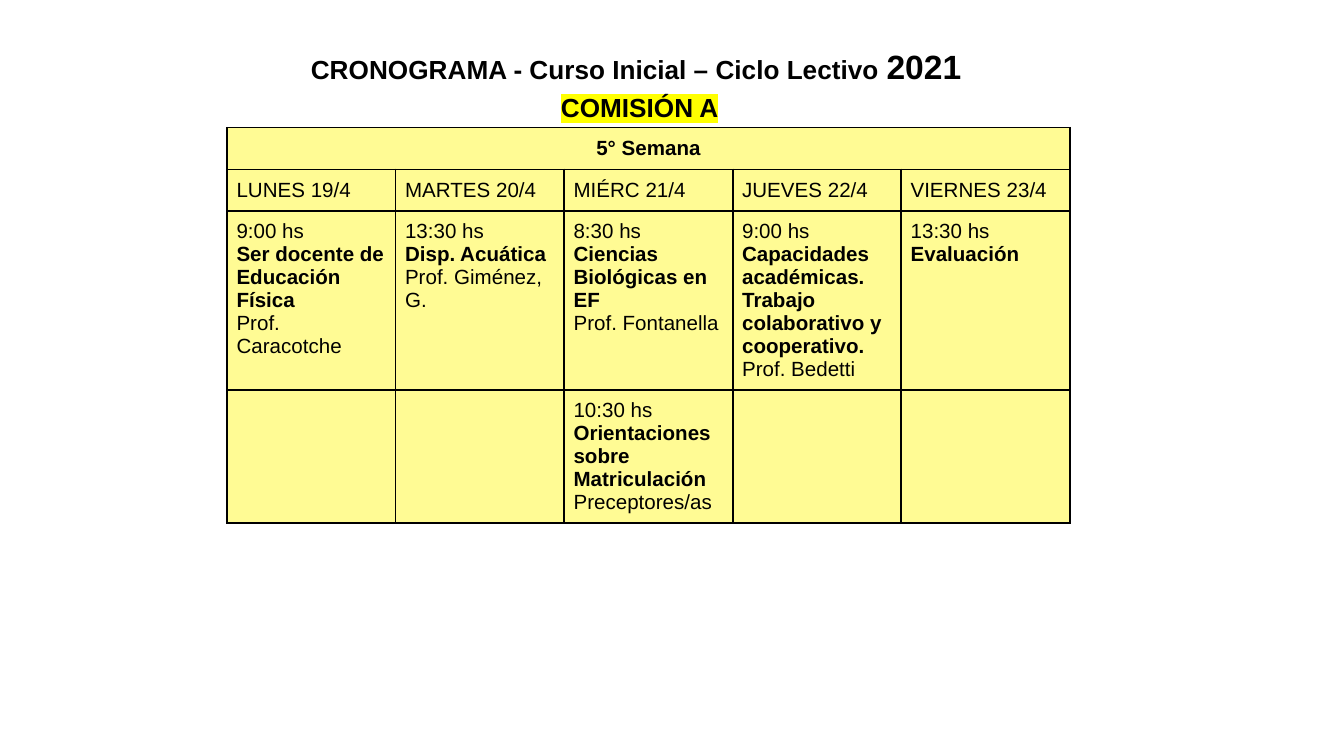
from dataclasses import dataclass

from lxml import etree
from pptx import Presentation
from pptx.dml.color import RGBColor
from pptx.enum import text as t
from pptx.oxml import ns
from pptx.table import _Cell as Cell
from pptx.util import Inches, Pt

COLORS = {"ink": "000000", "cell": "FFFB94", "mark": "FFFF00"}
FONT = "Arial"
PAD = Inches(0.07)
WIDE = Inches(10)
LEFT, TOP, WIDTH = Inches(1.69), Inches(0.95), Inches(6.27)
ROWS = [0.31, 0.31, 1.33, 0.99]


@dataclass
class Class:
    hour: str
    topic: str
    staff: str = ""


@dataclass
class Day:
    name: str
    first: Class
    second: Class | None = None


DAYS = [
    Day("LUNES 19/4",
        Class("9:00 hs", "Ser docente de Educación Física", "Prof. Caracotche")),
    Day("MARTES 20/4",
        Class("13:30 hs", "Disp. Acuática", "Prof. Giménez, G.")),
    Day("MIÉRC 21/4",
        Class("8:30 hs", "Ciencias Biológicas en EF", "Prof. Fontanella"),
        Class("10:30 hs", "Orientaciones sobre Matriculación", "Preceptores/as")),
    Day("JUEVES 22/4",
        Class("9:00 hs",
              "Capacidades académicas. Trabajo colaborativo y cooperativo.",
              "Prof. Bedetti")),
    Day("VIERNES 23/4", Class("13:30 hs", "Evaluación")),
]


def write(para, words: str, *, size: float = 11, bold: bool = False,
          mark: str | None = None) -> None:
    """Add a run to a paragraph; mark names its highlight colour."""
    run = para.add_run()
    run.text = words
    font = run.font
    font.size, font.bold, font.name = Pt(size), bold, FONT
    font.color.rgb = RGBColor.from_string(COLORS["ink"])
    if mark:
        light = etree.Element(ns.qn("a:highlight"))
        etree.SubElement(light, ns.qn("a:srgbClr"), val=COLORS[mark])
        run._r.rPr.find(ns.qn("a:solidFill")).addnext(light)


def style(cell: Cell) -> None:
    """Set margins, fill and a thin border on all four sides."""
    cell.margin_left = cell.margin_right = PAD
    cell.margin_top = cell.margin_bottom = PAD
    cell.fill.solid()
    cell.fill.fore_color.rgb = RGBColor.from_string(COLORS["cell"])
    props = cell._tc.get_or_add_tcPr()
    for spot, side in enumerate("LRTB"):
        line = etree.Element(ns.qn(f"a:ln{side}"), w=str(Pt(1)))
        fill = etree.SubElement(line, ns.qn("a:solidFill"))
        etree.SubElement(fill, ns.qn("a:srgbClr"), val=COLORS["ink"])
        props.insert(spot, line)


def fill_class(cell: Cell, item: Class) -> None:
    frame = cell.text_frame
    lines = [(item.hour, False), (item.topic, True), (item.staff, False)]
    for spot, (words, bold) in enumerate(lines):
        if words:
            para = frame.add_paragraph() if spot else frame.paragraphs[0]
            write(para, words, bold=bold)


def add_week(slide) -> None:
    frame = slide.shapes.add_table(len(ROWS), len(DAYS), LEFT, TOP, WIDTH,
                                   Inches(sum(ROWS)))
    table = frame.table
    table.first_row = table.horz_banding = False
    for row, high in zip(table.rows, ROWS):
        row.height = Inches(high)
    for cell in table.iter_cells():
        style(cell)

    head = table.cell(0, 0)
    head.merge(table.cell(0, len(DAYS) - 1))
    para = head.text_frame.paragraphs[0]
    para.alignment = t.PP_ALIGN.CENTER
    write(para, "5° Semana", bold=True)

    for col, day in enumerate(DAYS):
        write(table.cell(1, col).text_frame.paragraphs[0], day.name)
        fill_class(table.cell(2, col), day.first)
        if day.second:
            fill_class(table.cell(3, col), day.second)


def add_title(slide) -> None:
    box = slide.shapes.add_textbox(Inches(1.54), Inches(0.25),
                                   Inches(6.44), Inches(0.96))
    frame = box.text_frame
    frame.word_wrap = True
    top, sub = frame.paragraphs[0], frame.add_paragraph()
    for para in (top, sub):
        para.alignment = t.PP_ALIGN.CENTER
        para.line_spacing = 1.15
    write(top, "CRONOGRAMA - Curso Inicial – Ciclo Lectivo ", size=14, bold=True)
    write(top, "2021", size=18, bold=True)
    write(top, " ", size=14)
    write(sub, "COMISIÓN A", size=14, bold=True, mark="mark")


def main() -> None:
    deck = Presentation()
    deck.slide_width, deck.slide_height = WIDE, WIDE * 9 // 16
    slide = deck.slides.add_slide(deck.slide_layouts[6])
    add_week(slide)
    add_title(slide)
    deck.save("out.pptx")


if __name__ == "__main__":
    main()
